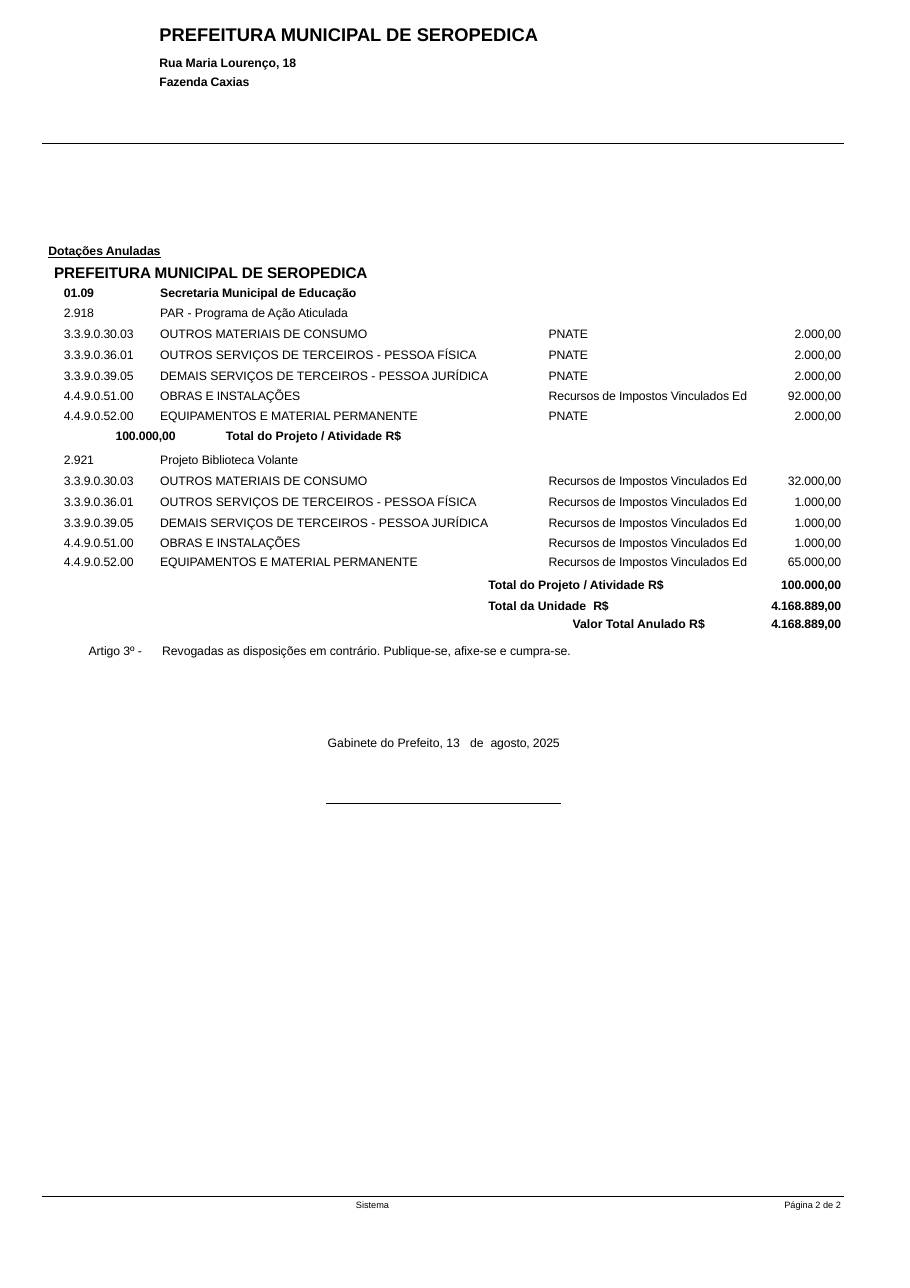
from lxml import etree
from pptx import Presentation
from pptx.dml.color import RGBColor
from pptx.enum.shapes import MSO_CONNECTOR
from pptx.enum.text import MSO_ANCHOR, PP_ALIGN
from pptx.oxml.ns import qn
from pptx.util import Pt

STRAIGHT = MSO_CONNECTOR.STRAIGHT
TOP = MSO_ANCHOR.TOP
LEFT, RIGHT = PP_ALIGN.LEFT, PP_ALIGN.RIGHT
COLORS = {"ink": "000000"}
FONT = "Arial"
PAGE_WIDTH, PAGE_HEIGHT = 594.72, 841.68
CODE_INDENT, NAME_INDENT, SOURCE_INDENT = 2.2, 8.2, 18.7
TIGHT = -0.1

EDUCATION_TAX = "Recursos de Impostos Vinculados Ed"
PROJECT_TOTAL = "Total do Projeto / Atividade R$"
# Code, name and letter spacing of the name
EXPENSES = [
    ("3.3.9.0.30.03", "OUTROS MATERIAIS DE CONSUMO", -0.07),
    ("3.3.9.0.36.01", "OUTROS SERVIÇOS DE TERCEIROS - PESSOA FÍSICA", -0.02),
    ("3.3.9.0.39.05", "DEMAIS SERVIÇOS DE TERCEIROS - PESSOA JURÍDICA", -0.03),
    ("4.4.9.0.51.00", "OBRAS E INSTALAÇÕES", TIGHT),
    ("4.4.9.0.52.00", "EQUIPAMENTOS E MATERIAL PERMANENTE", -0.08),
]
PROGRAM_AMOUNTS = [
    ("PNATE", "2.000,00"), ("PNATE", "2.000,00"), ("PNATE", "2.000,00"),
    (EDUCATION_TAX, "92.000,00"), ("PNATE", "2.000,00"),
]
LIBRARY_AMOUNTS = [(EDUCATION_TAX, amount) for amount in
                   ("32.000,00", "1.000,00", "1.000,00", "1.000,00", "65.000,00")]
COLUMN_WIDTHS = [56.9, 243.4, 157.7, 52.2]
ROW_HEIGHTS = [11.5, 13.7, 13.7, 13.7, 13.4, 13, 13, 14.6, 14.6,
               13.7, 13.6, 13.5, 13, 13.6, 14.2, 12.6, 10.1]
TOP_MARGINS = [0, 1.8, 1.4, 1.6, 1.4, 1.4, 1.1, 1.4, 2.6,
               1.4, 1.4, 1.6, 1.4, 0.9, 2, 1.8, 0.8]


def write(paragraph, parts, size=8, bold=False, align=LEFT):
    """Each part is (text, letter spacing)."""
    for text, spacing in parts:
        run = paragraph.add_run()
        run.text = text
        run._r.get_or_add_rPr().set("spc", str(round(spacing * 100)))
    paragraph.alignment = align
    font = paragraph.font
    font.name, font.size, font.bold = FONT, Pt(size), bold
    font.color.rgb = RGBColor.from_string(COLORS["ink"])


def add_text(slide, left, top, width, height, lines, inset=0.7):
    """Each line is (parts, size, bold)."""
    box = slide.shapes.add_textbox(Pt(left), Pt(top), Pt(width), Pt(height))
    frame = box.text_frame
    frame.word_wrap = True
    frame.margin_left = frame.margin_right = frame.margin_bottom = 0
    frame.margin_top = Pt(inset)
    for index, (parts, size, bold) in enumerate(lines):
        paragraph = frame.add_paragraph() if index else frame.paragraphs[0]
        write(paragraph, parts, size, bold)
    return frame.paragraphs


def add_rule(slide, left, top, width):
    line = slide.shapes.add_connector(STRAIGHT, Pt(left), Pt(top), Pt(left + width), Pt(top))
    line.line.color.rgb = RGBColor.from_string(COLORS["ink"])
    line.line.width = Pt(0.75)
    etree.SubElement(line._element.spPr, qn("a:effectLst"))


def add_header(slide, left, top, width):
    title, street, district = add_text(slide, left + 76.8, top, 265, 45.4, [
        ([("PREFEITURA MUNICIPAL DE SEROPEDICA", 0)], 12, True),
        ([("Rua Maria Lourenço, 18", -0.05)], 8, True),
        ([("Fazenda Caxias", TIGHT)], 8, True),
    ])
    street.space_before = Pt(4.7)
    street.line_spacing = district.line_spacing = 1.25
    add_rule(slide, left, top + 79.5, width)


def add_section_heading(slide, left, top):
    heading, = add_text(slide, left, top, 90, 13, [([("Dotações Anuladas", -0.05)], 8, True)], 3.6)
    heading.font.underline = True
    add_text(slide, left + 3.8, top + 16.4, 225, 13,
             [([("PREFEITURA MUNICIPAL DE SEROPEDICA", -0.02)], 10, True)], 0)


def fill_cell(cell, parts, indent=0, bold=False, align=LEFT):
    paragraph = cell.text_frame.paragraphs[0]
    properties = paragraph._p.get_or_add_pPr()
    properties.set("marL", str(Pt(indent)))
    properties.set("indent", "0")
    write(paragraph, parts, 8, bold, align)


def add_appropriations(slide, left, top):
    frame = slide.shapes.add_table(len(ROW_HEIGHTS), len(COLUMN_WIDTHS), Pt(left), Pt(top),
                                   Pt(sum(COLUMN_WIDTHS)), Pt(sum(ROW_HEIGHTS)))
    table = frame.table
    table.first_row = table.horz_banding = False
    for column, width in zip(table.columns, COLUMN_WIDTHS):
        column.width = Pt(width)
    for row, height, margin in zip(table.rows, ROW_HEIGHTS, TOP_MARGINS):
        row.height = Pt(height)
        for cell in row.cells:
            cell.fill.background()
            cell.vertical_anchor = TOP
            cell.margin_left = cell.margin_right = cell.margin_bottom = 0
            cell.margin_top = Pt(margin)
            # Keeps empty cells from stretching their row
            end_mark = cell.text_frame.paragraphs[0]._p.get_or_add_endParaRPr()
            end_mark.set("sz", "800")

    # Unit and project headings
    for row, code, name in [(0, "01.09", "Secretaria Municipal de Educação"),
                            (1, "2.918", "PAR - Programa de Ação Aticulada"),
                            (8, "2.921", "Projeto Biblioteca Volante")]:
        fill_cell(table.cell(row, 0), [(code, TIGHT)], CODE_INDENT, row == 0)
        fill_cell(table.cell(row, 1), [(name, -0.07)], NAME_INDENT, row == 0)

    # Expense lines of both projects
    for first_row, amounts in [(2, PROGRAM_AMOUNTS), (9, LIBRARY_AMOUNTS)]:
        for row, (expense, (source, amount)) in enumerate(zip(EXPENSES, amounts), first_row):
            code, name, spacing = expense
            fill_cell(table.cell(row, 0), [(code, TIGHT)], CODE_INDENT)
            fill_cell(table.cell(row, 1), [(name, spacing)], NAME_INDENT)
            fill_cell(table.cell(row, 2), [(source, TIGHT)], SOURCE_INDENT)
            fill_cell(table.cell(row, 3), [(amount, TIGHT)], align=RIGHT)

    # First project total, with its amount ahead of the label
    table.cell(7, 0).merge(table.cell(7, 3))
    total = table.cell(7, 0)
    tabs = etree.SubElement(total.text_frame.paragraphs[0]._p.get_or_add_pPr(), qn("a:tabLst"))
    for position in (232.3, 279.5):
        etree.SubElement(tabs, qn("a:tab"), pos=str(Pt(position)), algn="l")
    fill_cell(total, [("\t100.000,00\t", TIGHT), (PROJECT_TOTAL, -0.02)], bold=True)

    # Closing totals
    project_label = [(PROJECT_TOTAL, -0.02)]
    unit_label = [("Total da Unidade", 0), (" ", 2.2), ("R$", -0.2)]
    cancelled_label = [("Valor Total Anulado R$", -0.02)]
    for row, column, label, indent, amount in [
            (14, 1, project_label, 222.6, "100.000,00"),
            (15, 1, unit_label, 222.6, "4.168.889,00"),
            (16, 2, cancelled_label, 34.4, "4.168.889,00")]:
        if column == 1:
            table.cell(row, 1).merge(table.cell(row, 2))
        fill_cell(table.cell(row, column), label, indent, True)
        fill_cell(table.cell(row, 3), [(amount, TIGHT)], 0, True, RIGHT)


def add_closing(slide, left, top):
    article = "Revogadas as disposições em contrário. Publique-se, afixe-se e cumpra-se."
    date = [("Gabinete do Prefeito, 13", -0.03), (" ", 4.3), ("de", 0), (" ", 2.2),
            ("agosto, 2025", TIGHT)]
    for x, y, width, parts in [(0.9, 0, 45, [("Artigo 3º -", -0.05)]),
                               (49, 0, 300, [(article, -0.06)]),
                               (157.2, 60.2, 175, date)]:
        add_text(slide, left + x, top + y, width, 11.5, [(parts, 8, False)])
    add_rule(slide, left + 156.2, top + 105.8, 153.7)


def add_footer(slide, left, top, width):
    add_rule(slide, left, top, width)
    for x, text in [(205.2, "Sistema"), (485.2, "Página 2 de 2")]:
        add_text(slide, left + x, top + 1.2, 50, 8.6, [([(text, 0)], 6, False)])


def main():
    presentation = Presentation()
    presentation.slide_width = Pt(PAGE_WIDTH)
    presentation.slide_height = Pt(PAGE_HEIGHT)
    slide = presentation.slides.add_slide(presentation.slide_layouts[6])
    add_header(slide, 27.4, 14.2, 524.4)
    add_section_heading(slide, 31.6, 155.7)
    add_appropriations(slide, 39.6, 187.2)
    add_closing(slide, 57, 419.5)
    add_footer(slide, 27.4, 781.9, 524.4)
    presentation.save("out.pptx")


if __name__ == "__main__":
    main()
